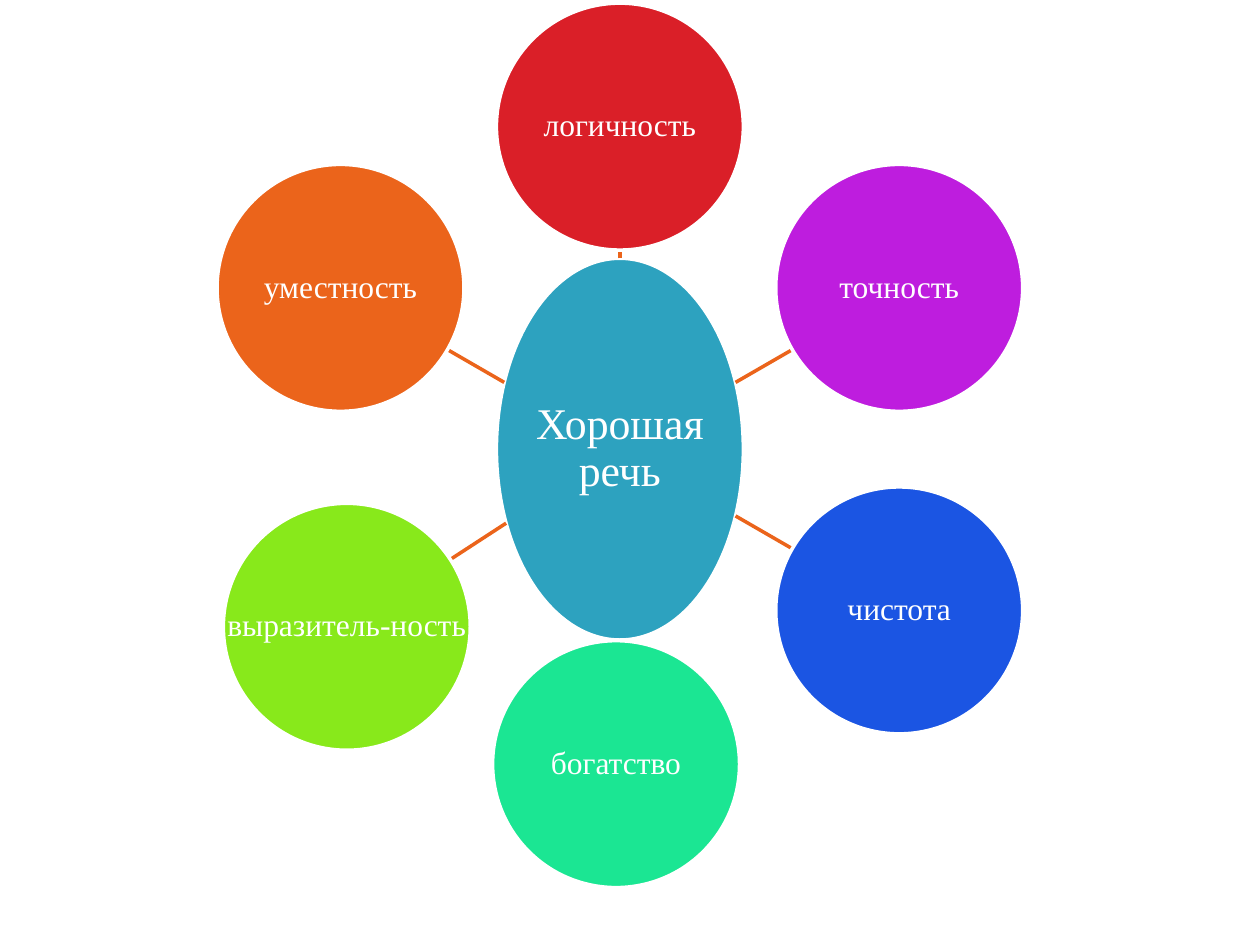
import math

from pptx import Presentation
from pptx import util as u
from pptx.dml.color import RGBColor
from pptx.enum import shapes, text
from pptx.oxml.ns import qn
from lxml import etree

# Grid of square cells over the slide
COLUMNS, ROWS = 100, 75
CELL = u.Inches(10) // COLUMNS

FONT = "Times New Roman"
WHITE, ORANGE, TEAL = "FFFFFF", "EB641B", "2DA2BF"
RADIUS = 9.8  # satellite radius, also the hub's half width
HUB_HALF_HEIGHT = 15.15
ORBIT = 25.6

# Clockwise from the top: label, fill, shift from the regular place
QUALITIES = [
    ("логичность", "DA1F28", (0, 0)),
    ("точность", "BE1DDE", (0, 0)),
    ("чистота", "1B55E3", (0, 0)),
    ("богатство", "1BE693", (-0.3, -0.6)),
    ("выразитель-ность", "88E91B", (0.5, 1.3)),
    ("уместность", ORANGE, (0, 0)),
]


def cells(count):
    return u.Emu(round(count * CELL))


def color(value):
    return RGBColor.from_string(value)


def add_bubble(slide, center, half_width, half_height, label, fill, size, inset, wrap):
    x, y = center
    bubble = slide.shapes.add_shape(
        shapes.MSO_SHAPE.OVAL, cells(x - half_width), cells(y - half_height),
        cells(2 * half_width), cells(2 * half_height))
    bubble.shadow.inherit = False
    bubble.fill.solid()
    bubble.fill.fore_color.rgb = color(fill)
    bubble.line.color.rgb = color(WHITE)
    bubble.line.width = u.Pt(2)

    frame = bubble.text_frame
    frame.word_wrap = wrap
    frame.vertical_anchor = text.MSO_ANCHOR.MIDDLE
    frame.margin_left = frame.margin_right = cells(inset)
    frame.margin_top = frame.margin_bottom = cells(inset)
    paragraph = frame.paragraphs[0]
    paragraph.text = label
    paragraph.alignment = text.PP_ALIGN.CENTER
    paragraph.line_spacing = 0.9
    paragraph.font.name = FONT
    paragraph.font.size = u.Pt(size)
    paragraph.font.color.rgb = color(WHITE)


def add_spoke(slide, hub, satellite):
    """Join the hub's edge to the satellite's edge along their centre line."""
    dx, dy = satellite[0] - hub[0], satellite[1] - hub[1]
    start = 1 / math.hypot(dx / RADIUS, dy / HUB_HALF_HEIGHT)
    end = max(start, 1 - RADIUS / math.hypot(dx, dy))
    points = [cells(origin + share * delta)
              for share in (start, end)
              for origin, delta in zip(hub, (dx, dy))]
    spoke = slide.shapes.add_connector(shapes.MSO_CONNECTOR.STRAIGHT, *points)
    spoke.line.color.rgb = color(ORANGE)
    spoke.line.width = u.Pt(2)
    etree.SubElement(spoke._element.spPr, qn("a:effectLst"))


def add_radial_diagram(slide, hub):
    # Hub
    add_bubble(slide, hub, RADIUS, HUB_HALF_HEIGHT, "Хорошая речь", TEAL, 25, 0.15, True)
    # Spokes and satellites
    for index, (label, fill, shift) in enumerate(QUALITIES):
        angle = math.tau * index / len(QUALITIES)
        satellite = (hub[0] + ORBIT * math.sin(angle) + shift[0],
                     hub[1] - ORBIT * math.cos(angle) + shift[1])
        add_spoke(slide, hub, satellite)
        add_bubble(slide, satellite, RADIUS, RADIUS, label, fill, 18, 0.1, False)


def main():
    presentation = Presentation()
    presentation.slide_width = cells(COLUMNS)
    presentation.slide_height = cells(ROWS)
    slide = presentation.slides.add_slide(presentation.slide_layouts[6])
    add_radial_diagram(slide, hub=(49.2, 35.65))
    presentation.save("out.pptx")


if __name__ == "__main__":
    main()
